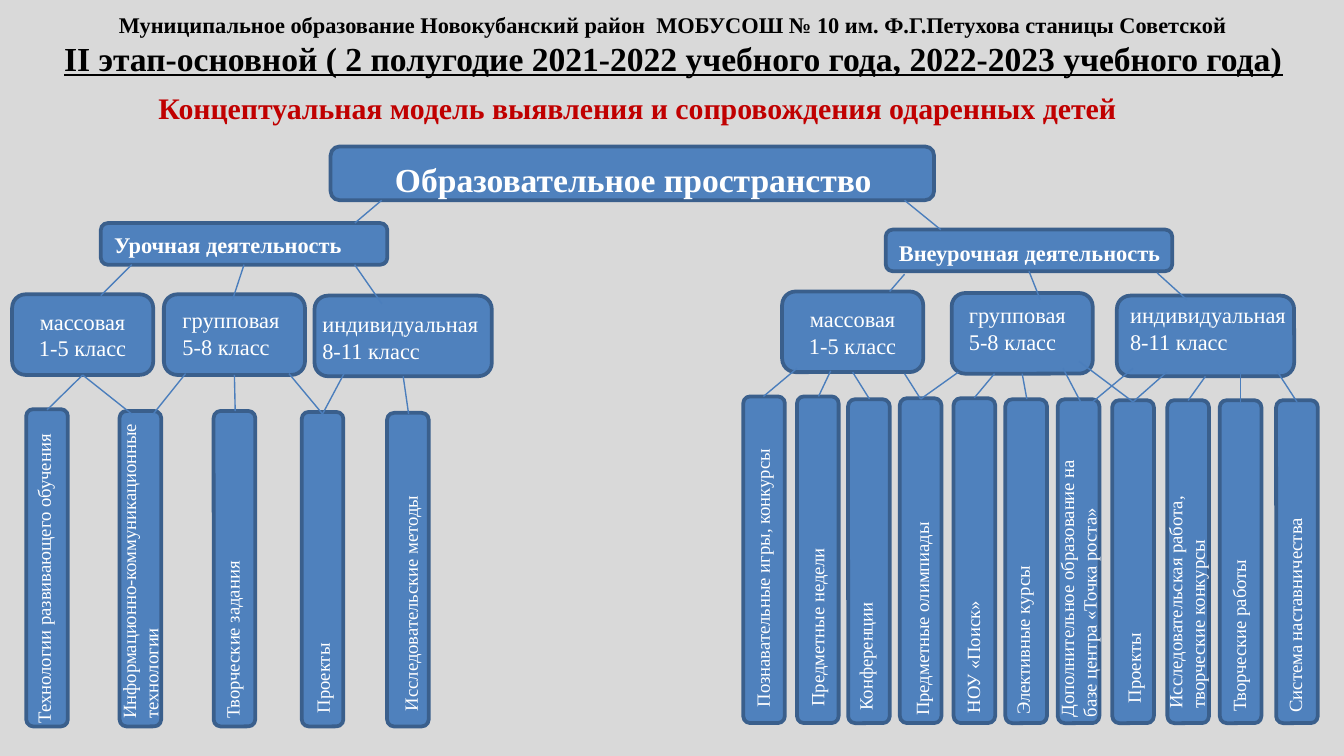
from lxml.etree import SubElement
from pptx import Presentation
from pptx.dml.color import RGBColor
from pptx.enum.shapes import MSO_CONNECTOR as Connector, MSO_SHAPE as Shape
from pptx.enum.text import MSO_ANCHOR as Anchor, PP_ALIGN as Align
from pptx.oxml.ns import qn
from pptx.util import Pt

COLORS = {"background": "D9D9D9", "box": "4F81BD", "border": "3A5F8C", "link": "4B7EBC",
          "white": "FFFFFF", "black": "000000", "red": "C00000"}
FONT = "Times New Roman"
BAR_WIDTH = 22.3
HEADING_SIZE = (153.5, 22.3)
GROUP_HEIGHT = 43.2


def color(name):
    return RGBColor.from_string(COLORS[name])


def write(frame, text, size=12, fill="white", bold=False, underline=None, align=Align.LEFT):
    """Append each line of text to the frame as a paragraph."""
    for line in text.split("\n"):
        paragraph = frame.paragraphs[0] if not frame.text else frame.add_paragraph()
        paragraph.alignment = align
        run = paragraph.add_run()
        run.text = line
        font = run.font
        font.name, font.size, font.bold, font.underline = FONT, Pt(size), bold, underline
        font.color.rgb = color(fill)


def add_text(slide, box, text, **style):
    shape = slide.shapes.add_textbox(*map(Pt, box))
    shape.text_frame.word_wrap = True
    write(shape.text_frame, text, **style)
    return shape


def add_box(slide, box):
    shape = slide.shapes.add_shape(Shape.ROUNDED_RECTANGLE, *map(Pt, box))
    shape.shadow.inherit = False
    shape.fill.solid()
    shape.fill.fore_color.rgb = color("box")
    shape.line.color.rgb = color("border")
    shape.line.width = Pt(2)
    return shape


def add_link(slide, start_x, start_y, end_x, end_y, parents=()):
    """Draw a line, joined to a parent where it starts at its bottom middle."""
    connector = slide.shapes.add_connector(
        Connector.STRAIGHT, Pt(start_x), Pt(start_y), Pt(end_x), Pt(end_y))
    connector.line.color.rgb = color("link")
    connector.line.width = Pt(0.75)
    SubElement(connector._element.spPr, qn("a:effectLst"))
    for parent in parents:
        middle = parent.left + parent.width / 2
        bottom = parent.top + parent.height
        if abs(middle - Pt(start_x)) < Pt(1) and abs(bottom - Pt(start_y)) < Pt(1.5):
            connector.begin_connect(parent, 2)


def upright(center_x, bottom, length, thickness):
    """Box that stands on bottom once it is turned by a quarter."""
    return (center_x - length / 2, bottom - length / 2 - thickness / 2, length, thickness)


def add_group(slide, left, top, width, text, text_offset):
    shape = add_box(slide, (left, top, width, GROUP_HEIGHT))
    if text_offset is None:
        shape.text_frame.vertical_anchor = Anchor.MIDDLE
        write(shape.text_frame, text, align=Align.CENTER)
    else:
        shift_x, shift_y = text_offset
        text_width = 67 if width < 80 else 99
        add_text(slide, (left + shift_x, top + shift_y, text_width, 36), text)
    return shape


def add_branch(slide, box, heading, groups, bars, links):
    """Heading, three groups and upright bars; positions are relative to the box."""
    left, top, width, height = box
    bottom = top + height

    # Heading
    heading_left, heading_text, text_width, text_shift = heading
    heading_left += left
    heading_shape = add_box(slide, (heading_left, top, *HEADING_SIZE))
    add_text(slide, (heading_left, top + text_shift, text_width, 21.6), heading_text, bold=True)

    # Bars with their labels
    for center, length, text, shift_x, shift_y, text_length in bars:
        bar = add_box(slide, upright(left + center, bottom, length, BAR_WIDTH))
        bar.rotation = 90
        thickness = 31.7 if "\n" in text else 19.4
        label = add_text(slide, upright(left + center + shift_x, bottom + shift_y,
                                        text_length, thickness), text, size=10)
        label.rotation = 270

    # Groups
    parents = [heading_shape]
    for group_left, group_top, group_width, text, offset in groups:
        parents.append(add_group(slide, left + group_left, top + group_top,
                                 group_width, text, offset))

    # Links
    for start_x, start_y, end_x, end_y in links:
        add_link(slide, left + start_x, top + start_y, left + end_x, top + end_y, parents)


def add_header(slide, box):
    left, top, width, height = box
    header = add_text(
        slide, (left, top, width, 44),
        "Муниципальное образование Новокубанский район  МОБУСОШ № 10 им. Ф.Г.Петухова станицы Советской",
        fill="black", bold=True, align=Align.CENTER)
    write(header.text_frame,
          "II этап-основной ( 2 полугодие 2021-2022 учебного года, 2022-2023 учебного года)",
          size=18, fill="black", bold=True, underline=True, align=Align.CENTER)
    add_text(slide, (left + 71.3, top + 42.5, 571.7, 26.6),
             "Концептуальная модель выявления и сопровождения одаренных детей",
             size=16, fill="red", bold=True)


def add_root(slide, box):
    left, top, width, height = box
    add_box(slide, box)
    add_text(slide, (left + 27.4, top + 2.9, 306, height), "Образовательное пространство",
             size=18, bold=True)
    bottom = top + height
    add_link(slide, left + 27.4, bottom, left + 13, bottom + 12.2)
    add_link(slide, left + 307.5, bottom, left + 326.9, bottom + 15.8)


MASS, TEAM, SOLO = "массовая\n1-5 класс", "групповая\n5-8 класс", "индивидуальная\n8-11 класс"

# Group: left, top, width, text, text offset
LESSON_GROUPS = [(6.5, 38.2, 75.6, MASS, None), (87.8, 38.2, 75.6, TEAM, (2.9, 2.9)),
                 (168.5, 38.9, 95, SOLO, (-2.9, 4.3))]
EXTRA_GROUPS = [(23, 33.2, 75.6, MASS, None), (113.8, 34, 75.6, TEAM, (2.2, 0.7)),
                (202.3, 35.4, 95, SOLO, (0, -0.7))]

# Bar: center, length, label, label shift across and down, label length
LESSON_BARS = [
    (25.2, 170, "Технологии развивающего обучения", -1.8, 5.4, 174),
    (75.2, 169, "Информационно-коммуникационные\nтехнологии", 0, 2.8, 180),
    (125.6, 169, "Творческие задания", -1, 2.8, 105),
    (172.8, 168.5, "Проекты", 0, 0, 57),
    (218.5, 168, "Исследовательские методы", 1.5, -1.2, 135),
]
EXTRA_BARS = [
    (13.3, 175, "Познавательные игры, конкурсы", -0.7, -1.4, 158),
    (42.1, 175, "Предметные недели", -0.3, -1.8, 173),
    (69.5, 173.5, "Конференции", -1.8, 0.3, 77),
    (97.2, 174, "Предметные олимпиады", 0.7, 3.2, 124),
    (126, 174, "НОУ «Поиск»", -0.7, 1.8, 117),
    (153.7, 173.5, "Элективные курсы", -1.8, 2.6, 151),
    (181.8, 173.5, "Дополнительное образование на\nбазе центра «Точка роста»", 0, 3.9, 276),
    (211, 173, "Проекты", 0.3, -3.6, 54),
    (240.5, 173, "Исследовательская работа,\nтворческие конкурсы", -0.7, -0.8, 136),
    (268.6, 173, "Творческие работы", -0.8, 1, 102),
    (298.8, 173, "Система наставничества", -1.1, 1.4, 125),
]

# Link: start x, start y, end x, end y
LESSON_LINKS = [
    (70.6, 22.3, 54, 38.9), (130.3, 22.3, 124.6, 41.1), (190, 22.3, 204.5, 43.2),
    (44.6, 80.7, 25.2, 100.1), (44.6, 80.7, 70.6, 102.3), (99.4, 80.7, 82.1, 102.3),
    (126, 80.7, 126, 100.8), (154.8, 80.7, 172.8, 102.3), (184.3, 80.7, 172.8, 102.3),
    (216, 81.4, 218.9, 102.3),
]
EXTRA_LINKS = [
    (88.6, 23.9, 80.6, 33.2), (154.8, 23.2, 161.3, 37.6), (223.9, 23.2, 239.8, 37.6),
    (31, 74.3, 13, 89.4), (49, 75.7, 42.5, 89.4), (60.5, 75.7, 69.8, 90.8),
    (88.6, 77.2, 97.2, 90.8), (117.4, 76.4, 97.2, 90.8), (136.8, 77.2, 126, 90.1),
    (151.9, 76.4, 154.1, 90.8), (173.5, 74.3, 182.9, 92.3), (211, 74.3, 189.4, 92.3),
    (182.2, 70.7, 211, 92.3), (229, 76.4, 211, 92.3), (249.8, 77.9, 240.5, 91.6),
    (268.6, 76.4, 268.6, 92.3), (288, 75.7, 298.8, 92.3),
]


def main():
    presentation = Presentation()
    presentation.slide_width, presentation.slide_height = Pt(720), Pt(405)
    slide = presentation.slides.add_slide(presentation.slide_layouts[6])
    slide.background.fill.solid()
    slide.background.fill.fore_color.rgb = color("background")

    add_header(slide, (6.5, 2.2, 708.5, 69))
    add_branch(slide, (0, 119.5, 264, 269.7), (54, "Урочная деятельность", 153.5, 0.7),
               LESSON_GROUPS, LESSON_BARS, LESSON_LINKS)
    add_branch(slide, (396, 123, 315, 264.4), (78.5, "Внеурочная деятельность", 170.6, 1.5),
               EXTRA_GROUPS, EXTRA_BARS, EXTRA_LINKS)
    add_root(slide, (177.1, 78.5, 323.3, 28.8))
    presentation.save("out.pptx")


if __name__ == "__main__":
    main()
